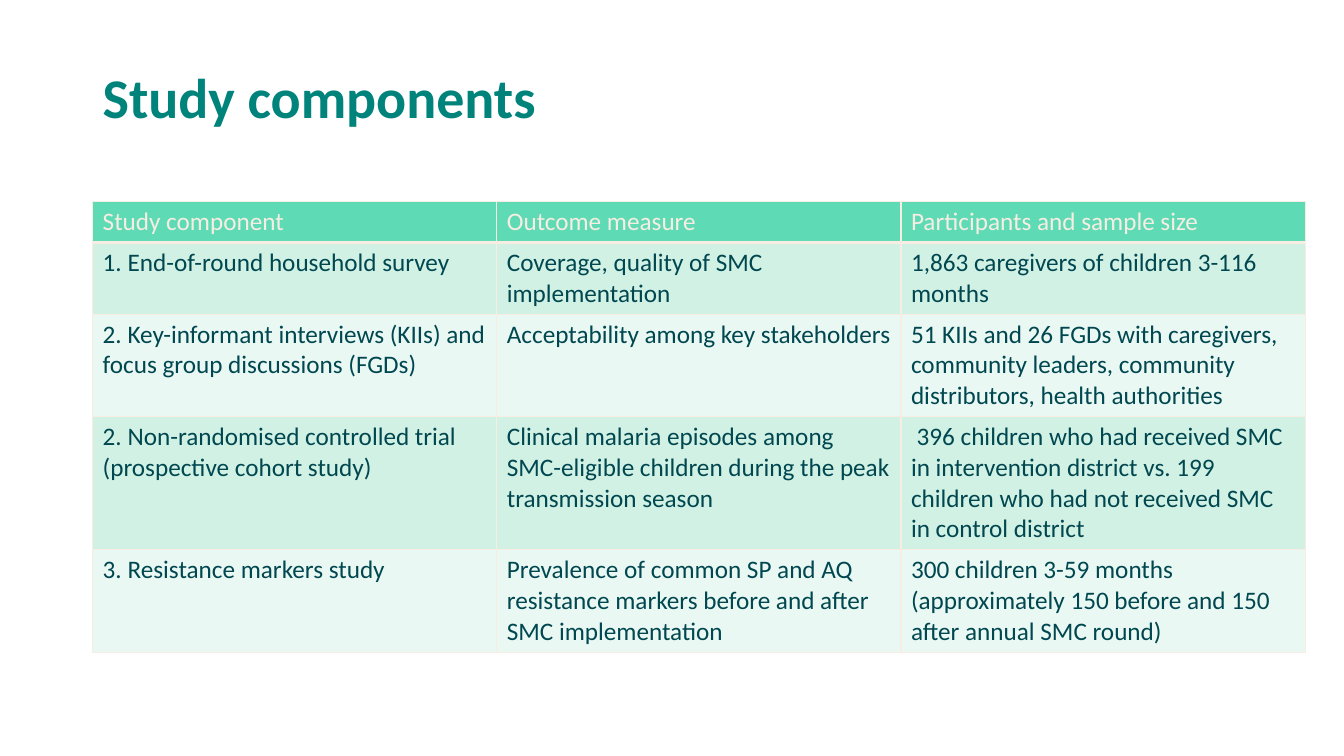
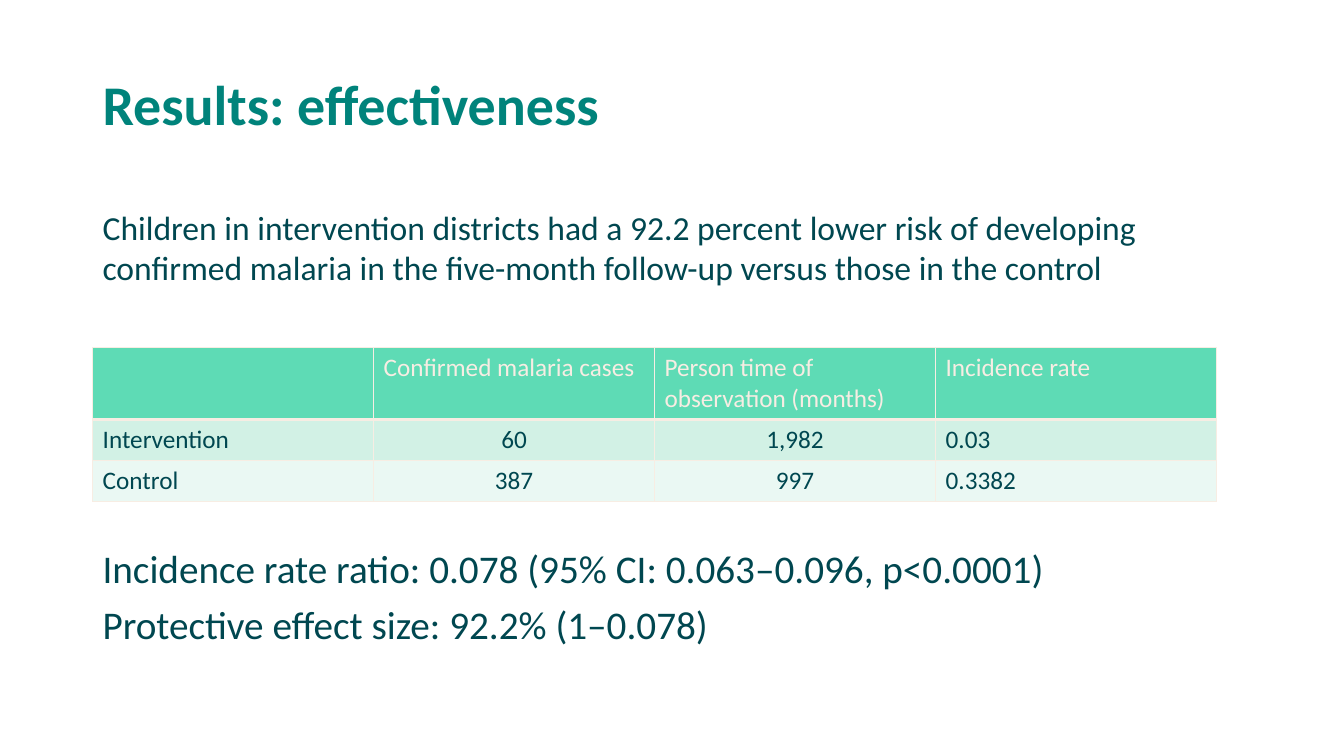
"""Builds two slides on a seasonal malaria chemoprevention study."""
from lxml.etree import SubElement
from pptx import Presentation
from pptx.dml.color import RGBColor
from pptx.enum.text import MSO_ANCHOR as Anchor, PP_ALIGN as Align
from pptx.oxml.ns import qn
from pptx.util import Pt

TEAL = RGBColor(0x00, 0x83, 0x7B)
DARK = RGBColor(0x00, 0x47, 0x50)
CREAM = RGBColor(0xF7, 0xED, 0xE3)
HEADER_GREEN = RGBColor(0x5E, 0xDB, 0xB5)
BANDS = (RGBColor(0xD2, 0xF1, 0xE5), RGBColor(0xEA, 0xF8, 0xF3))

LEFT = 66.2
BODY_WIDTH = 849
BODY_HEIGHT = 104.4
LINE_HEIGHT = 22
CELL_PADDING = 7.2

TITLE_FONT = {"name": "Calibri", "size": Pt(40), "bold": True}
LEAD_FONT = {"name": "Calibri", "size": Pt(24), "bold": False}
RESULT_FONT = {"name": "Calibri", "size": Pt(28), "bold": False}
CELL_FONT = {"name": "Calibri", "size": Pt(18), "bold": False}

TITLE_SPACING = {"line_spacing": 0.9}
LEAD_SPACING = {"space_before": Pt(6), "space_after": Pt(12)}
RESULT_SPACING = {"line_spacing": 0.9, "space_before": Pt(10)}

COMPONENTS = [
    ["Study component", "Outcome measure", "Participants and sample size"],
    ["1. End-of-round household survey",
     "Coverage, quality of SMC implementation",
     "1,863 caregivers of children 3-116 months"],
    ["2. Key-informant interviews (KIIs) and focus group discussions (FGDs)",
     "Acceptability among key stakeholders",
     "51 KIIs and 26 FGDs with caregivers, community leaders, "
     "community distributors, health authorities"],
    ["2. Non-randomised controlled trial (prospective cohort study)",
     "Clinical malaria episodes among SMC-eligible children during the peak "
     "transmission season",
     " 396 children who had received SMC in intervention district vs. "
     "199 children who had not received SMC in control district"],
    ["3. Resistance markers study",
     "Prevalence of common SP and AQ resistance markers before and after "
     "SMC implementation",
     "300 children 3-59 months (approximately 150 before and 150 after "
     "annual SMC round)"],
]
COMPONENT_LINES = [1, 2, 3, 4, 3]

INCIDENCE = [
    ["", "Confirmed malaria cases", "Person time of observation (months)",
     "Incidence rate"],
    ["Intervention", "60", "1,982", "0.03"],
    ["Control", "387", "997", "0.3382"],
]
INCIDENCE_LINES = [2, 1, 1]
CENTRED_COLUMNS = (1, 2)


def apply_format(target, values):
    """Set each named attribute on the target."""
    for name, value in values.items():
        setattr(target, name, value)


def write_paragraph(paragraph, text, font, color, spacing):
    """Fill one paragraph with formatted text."""
    paragraph.text = text
    apply_format(paragraph, spacing)
    apply_format(paragraph.font, font)
    paragraph.font.color.rgb = color


def add_text(slide, top, width, height, lines, font, color, spacing,
             anchor=Anchor.TOP):
    """Add a wrapped text box with one paragraph per line."""
    box = slide.shapes.add_textbox(Pt(LEFT), Pt(top), Pt(width), Pt(height))
    frame = box.text_frame
    apply_format(frame, {"word_wrap": True, "vertical_anchor": anchor})
    for index, line in enumerate(lines):
        paragraph = frame.add_paragraph() if index else frame.paragraphs[0]
        write_paragraph(paragraph, line, font, color, spacing)


def add_title(slide, top, text):
    """Add the slide title."""
    add_text(slide, top, 794, 51, [text], TITLE_FONT, TEAL, TITLE_SPACING,
             Anchor.MIDDLE)


def set_borders(cell, bottom_width):
    """Draw cream lines round a cell."""
    properties = cell._tc.get_or_add_tcPr()
    widths = {"a:lnL": 1, "a:lnR": 1, "a:lnT": 1, "a:lnB": bottom_width}
    for tag, width in widths.items():
        line = SubElement(properties, qn(tag), w=str(Pt(width)))
        fill = SubElement(line, qn("a:solidFill"))
        SubElement(fill, qn("a:srgbClr"), val=str(CREAM))


def add_banded_table(slide, top, column_width, rows, line_counts, centred=()):
    """Add a table with a green header and alternating row bands."""
    heights = [CELL_PADDING + LINE_HEIGHT * count for count in line_counts]
    columns = len(rows[0])
    table = slide.shapes.add_table(
        len(rows), columns, Pt(LEFT), Pt(top),
        Pt(column_width * columns), Pt(sum(heights))).table
    for column in table.columns:
        column.width = Pt(column_width)
    for row_index, texts in enumerate(rows):
        table.rows[row_index].height = Pt(heights[row_index])
        header = row_index == 0
        background = HEADER_GREEN if header else BANDS[(row_index - 1) % 2]
        for column_index, text in enumerate(texts):
            cell = table.cell(row_index, column_index)
            set_borders(cell, 3 if header else 1)
            cell.fill.solid()
            cell.fill.fore_color.rgb = background
            is_centred = column_index in centred and not header
            write_paragraph(
                cell.text_frame.paragraphs[0], text, CELL_FONT,
                CREAM if header else DARK,
                {"alignment": Align.CENTER if is_centred else Align.LEFT})


def add_components_slide(presentation):
    """Add the slide that lists the study components."""
    slide = presentation.slides.add_slide(presentation.slide_layouts[6])
    add_title(slide, 46, "Study components")
    add_banded_table(slide, 144, 288.7, COMPONENTS, COMPONENT_LINES)


def add_effectiveness_slide(presentation):
    """Add the slide with the effectiveness results."""
    slide = presentation.slides.add_slide(presentation.slide_layouts[6])
    add_title(slide, 51, "Results: effectiveness")
    add_text(slide, 144, BODY_WIDTH, BODY_HEIGHT,
             ["Children in intervention districts had a 92.2 percent lower "
              "risk of developing confirmed malaria in the five-month "
              "follow-up versus those in the control"],
             LEAD_FONT, DARK, LEAD_SPACING)
    add_banded_table(slide, 248.4, 200.7, INCIDENCE, INCIDENCE_LINES,
                     CENTRED_COLUMNS)
    add_text(slide, 388.8, BODY_WIDTH, BODY_HEIGHT,
             ["Incidence rate ratio: 0.078 (95% CI: 0.063–0.096, p<0.0001)",
              "Protective effect size: 92.2% (1–0.078)"],
             RESULT_FONT, DARK, RESULT_SPACING)


def main():
    """Build and save the presentation."""
    presentation = Presentation()
    apply_format(presentation,
                 {"slide_width": Pt(960), "slide_height": Pt(540)})
    add_components_slide(presentation)
    add_effectiveness_slide(presentation)
    presentation.save("out.pptx")


if __name__ == "__main__":
    main()
